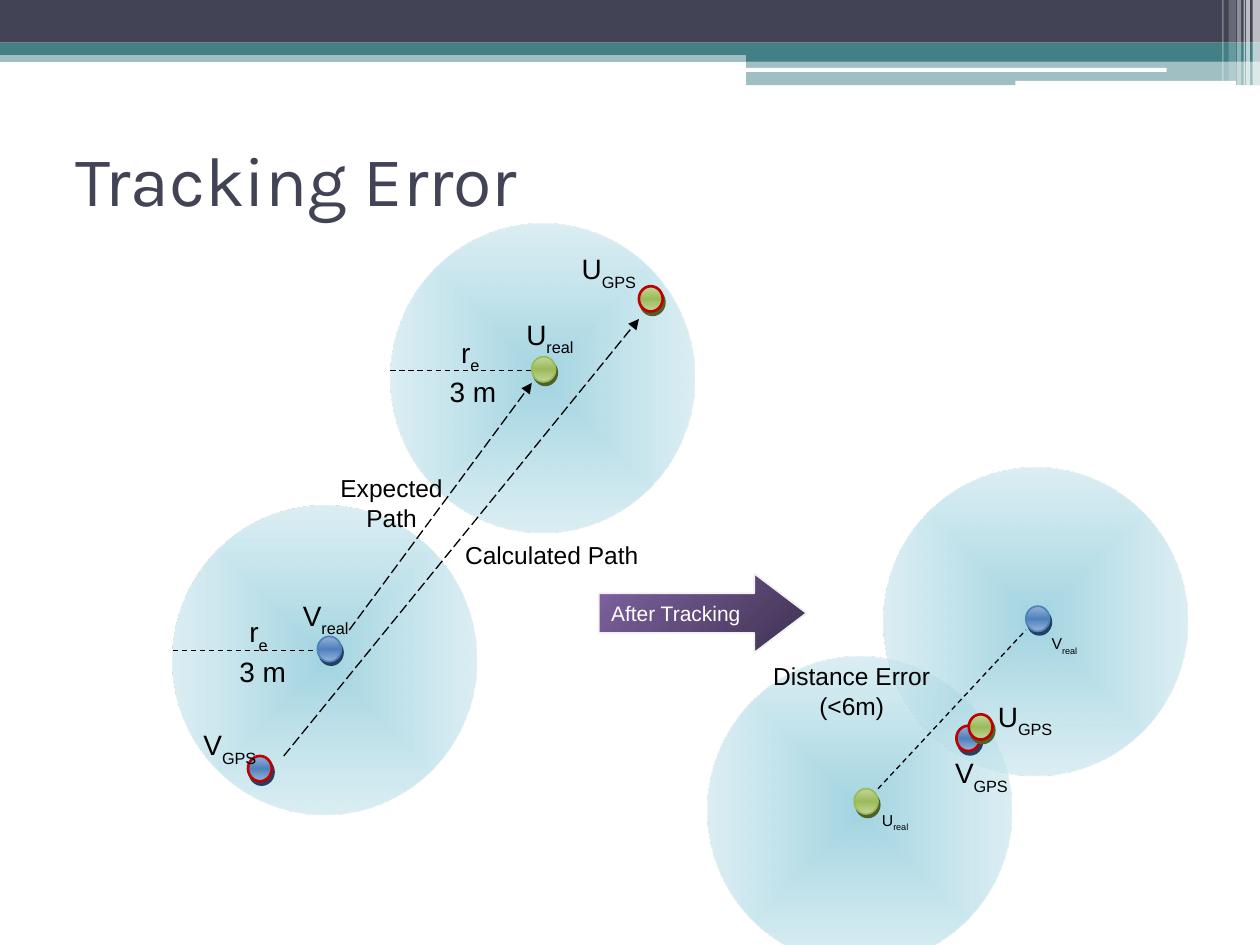
from dataclasses import dataclass

import pptx
import pptx.dml.color
import pptx.enum.dml
import pptx.enum.shapes
import pptx.enum.text
import pptx.oxml
import pptx.oxml.ns
import pptx.util

Cm = pptx.util.Cm
Pt = pptx.util.Pt
Shape = pptx.enum.shapes.MSO_SHAPE
Align = pptx.enum.text.PP_ALIGN
Anchor = pptx.enum.text.MSO_ANCHOR
Dash = pptx.enum.dml.MSO_LINE
NS = pptx.oxml.ns.nsdecls("a")


@dataclass(frozen=True)
class Theme:
    navy: str = "424456"
    teal: str = "438086"
    white: str = "FFFFFF"
    black: str = "000000"
    red: str = "C00000"
    edge: str = "F2F2F2"
    zone: tuple = ((0, "92CDDC", 85), (100, "C8E6ED", 64))
    arrow: tuple = ((0, "8064A2", 100), (100, "3F3151", 100))
    blue: tuple = ("95B3D7", "4F81BD", "243F60")
    green: tuple = ("C2D69B", "9BBB59", "4E6128")
    head: str = "Karla"
    body: str = "Arial"
    title: int = 40
    large: int = 16
    mid: int = 14
    small: int = 12
    tiny: int = 9


T = Theme()


def tint(color):
    return pptx.dml.color.RGBColor.from_string(color)


def style(run, size, color, face=T.body):
    run.font.size = Pt(size)
    run.font.name = face
    run.font.color.rgb = tint(color)


def add_shape(slide, kind, x, y, w, h):
    shape = slide.shapes.add_shape(kind, Cm(x), Cm(y), Cm(w), Cm(h))
    shape.shadow.inherit = False
    shape.line.fill.background()
    return shape


def add_bar(slide, x, y, w, h, color, alpha=100, kind=Shape.RECTANGLE):
    bar = add_shape(slide, kind, x, y, w, h)
    bar.fill.solid()
    bar.fill.fore_color.rgb = tint(color)
    if alpha < 100:
        clr = bar._element.spPr.find(".//" + pptx.oxml.ns.qn("a:srgbClr"))
        clr.append(pptx.oxml.parse_xml(f'<a:alpha {NS} val="{alpha * 1000}"/>'))


def blend(shape, stops, angle=None):
    shape.fill.gradient()
    marks = "".join(
        f'<a:gs pos="{pos * 1000}"><a:srgbClr val="{color}">'
        f'<a:alpha val="{alpha * 1000}"/></a:srgbClr></a:gs>'
        for pos, color, alpha in stops)
    if angle is None:
        mode = ('<a:path path="shape"><a:fillToRect l="50000" t="50000" '
                'r="50000" b="50000"/></a:path>')
    else:
        mode = f'<a:lin ang="{angle * 60000}" scaled="0"/>'
    props = shape._element.spPr
    old = props.find(pptx.oxml.ns.qn("a:gradFill"))
    props.replace(old, pptx.oxml.parse_xml(
        f'<a:gradFill {NS}><a:gsLst>{marks}</a:gsLst>{mode}</a:gradFill>'))


def edge(shape, color, width):
    shape.line.color.rgb = tint(color)
    shape.line.width = Pt(width)


def add_zone(slide, x, y):
    blend(add_shape(slide, Shape.OVAL, x, y, 6.12, 6.22), T.zone)


def add_dot(slide, x, y, hue, gps):
    light, main_hue, dark = hue
    dot = add_shape(slide, Shape.FLOWCHART_CONNECTOR, x, y, 0.48, 0.51)
    blend(dot, ((0, light, 100), (50, main_hue, 100), (100, light, 100)), 90)
    edge(dot, T.red if gps else main_hue, 1.5 if gps else 1)
    glow = dot._element.spPr.find(pptx.oxml.ns.qn("a:effectLst"))
    glow.append(pptx.oxml.parse_xml(
        f'<a:outerShdw {NS} blurRad="0" dist="{Pt(2.2)}" dir="{63 * 60000}" '
        f'algn="ctr" rotWithShape="0"><a:srgbClr val="{dark}"/></a:outerShdw>'))


def add_line(slide, x1, y1, x2, y2, dash=Dash.DASH, arrow=False):
    line = slide.shapes.add_connector(
        pptx.enum.shapes.MSO_CONNECTOR.STRAIGHT, Cm(x1), Cm(y1), Cm(x2), Cm(y2))
    edge(line, T.black, 0.75)
    line.line.dash_style = dash
    if arrow:
        line.line._get_or_add_ln().append(
            pptx.oxml.parse_xml(f'<a:tailEnd {NS} type="triangle"/>'))
    line._element.spPr.append(pptx.oxml.parse_xml(f'<a:effectLst {NS}/>'))


def add_label(slide, x, y, w, text, sub="", size=T.large):
    frame = slide.shapes.add_textbox(Cm(x), Cm(y), Cm(w), Cm(0.79)).text_frame
    frame.word_wrap = True
    frame.text = text
    para = frame.paragraphs[0]
    para.alignment = Align.CENTER
    if sub:
        run = para.add_run()
        run.text = sub
        run._r.get_or_add_rPr().set("baseline", "-30000")
    for run in para.runs:
        style(run, size, T.black)


def add_arrow(slide, text):
    arrow = add_shape(slide, Shape.RIGHT_ARROW, 12.07, 11.56, 4.19, 1.6)
    arrow.adjustments[1] = 0.66
    blend(arrow, T.arrow, 45)
    edge(arrow, T.edge, 1)
    arrow.text_frame.text = text
    para = arrow.text_frame.paragraphs[0]
    para.alignment = Align.LEFT
    style(para.runs[0], T.small, T.white)


def set_title(slide, text):
    title = slide.shapes.title
    title.left, title.top = Cm(1.27), Cm(2.11)
    title.width, title.height = Cm(22.86), Cm(2.97)
    frame = title.text_frame
    frame.text = text
    frame.vertical_anchor = Anchor.MIDDLE
    frame.paragraphs[0].alignment = Align.LEFT
    style(frame.paragraphs[0].runs[0], T.title, T.navy, T.head)


def add_band(slide):
    add_bar(slide, 0, 1.02, 25.4, 0.23, T.teal, 50)
    add_bar(slide, 0, 0, 25.4, 0.86, T.navy)
    add_bar(slide, 0, 0.86, 25.4, 0.25, T.teal)
    add_bar(slide, 15.04, 0.99, 10.36, 0.25, T.teal)
    add_bar(slide, 15.04, 1.22, 10.36, 0.5, T.teal, 50)
    for x, y, w, h in ((15.01, 1.37, 8.51, 0.08), (20.47, 1.63, 4.45, 0.1)):
        add_bar(slide, x, y, w, h, T.white, kind=Shape.ROUNDED_RECTANGLE)
    for x, w, h, alpha in ((25.25, 0.15, 1.73, 65), (25.12, 0.08, 1.73, 65),
                           (25.07, 0.03, 1.73, 60), (24.94, 0.08, 1.73, 40),
                           (24.77, 0.15, 1.63, 20), (24.64, 0.03, 1.63, 30)):
        add_bar(slide, x, 0, w, h, T.white, alpha)


def main():
    deck = pptx.Presentation()
    deck.slide_width, deck.slide_height = Cm(25.4), Cm(19.05)
    slide = deck.slides.add_slide(deck.slide_layouts[5])
    add_band(slide)
    set_title(slide, "Tracking Error")
    add_arrow(slide, "After Tracking")

    for x, y in ((14.27, 13.23), (17.81, 9.42), (3.48, 10.19), (7.87, 4.52)):
        add_zone(slide, x, y)

    add_line(slide, 17.7, 15.9, 20.68, 12.7)
    for x, y in ((3.48, 13.11), (7.87, 7.47)):
        add_line(slide, x, y, x + 3.33, y)
    for ends in ((5.72, 15.24, 12.88, 6.43), (7.04, 12.7, 10.72, 7.72)):
        add_line(slide, *ends, Dash.LONG_DASH, True)

    for x, y, hue, gps in (
            (20.68, 12.22, T.blue, False), (17.22, 15.9, T.green, False),
            (19.28, 14.63, T.blue, True), (19.53, 14.4, T.green, True),
            (6.4, 12.83, T.blue, False), (5, 15.24, T.blue, True),
            (10.72, 7.19, T.green, False), (12.88, 5.77, T.green, True)):
        add_dot(slide, x, y, hue, gps)

    for x, y, w, text, sub in (
            (18.82, 15.11, 1.93, "V", "GPS"), (19.74, 13.97, 1.85, "U", "GPS"),
            (5.31, 11.94, 2.51, "V", "real"), (9.83, 6.27, 2.51, "U", "real"),
            (3.38, 12.27, 3.66, "r", "e"), (7.65, 6.63, 3.66, "r", "e"),
            (3.63, 13.08, 3.33, "3 m", ""), (7.87, 7.42, 3.33, "3 m", ""),
            (3.38, 14.55, 2.51, "V", "GPS"), (11.02, 4.95, 2.51, "U", "GPS")):
        add_label(slide, x, y, w, text, sub)
    add_label(slide, 20.75, 12.65, 1.42, "V", "real", T.tiny)
    add_label(slide, 16.79, 16.21, 2.51, "U", "real", T.tiny)
    for x, y, w, text in ((14.81, 13.21, 4.72, "Distance Error (<6m)"),
                          (9.07, 10.77, 4.11, "Calculated Path"),
                          (6.32, 9.42, 3.15, "Expected Path")):
        add_label(slide, x, y, w, text, size=T.mid)
    deck.save("out.pptx")


if __name__ == "__main__":
    main()
